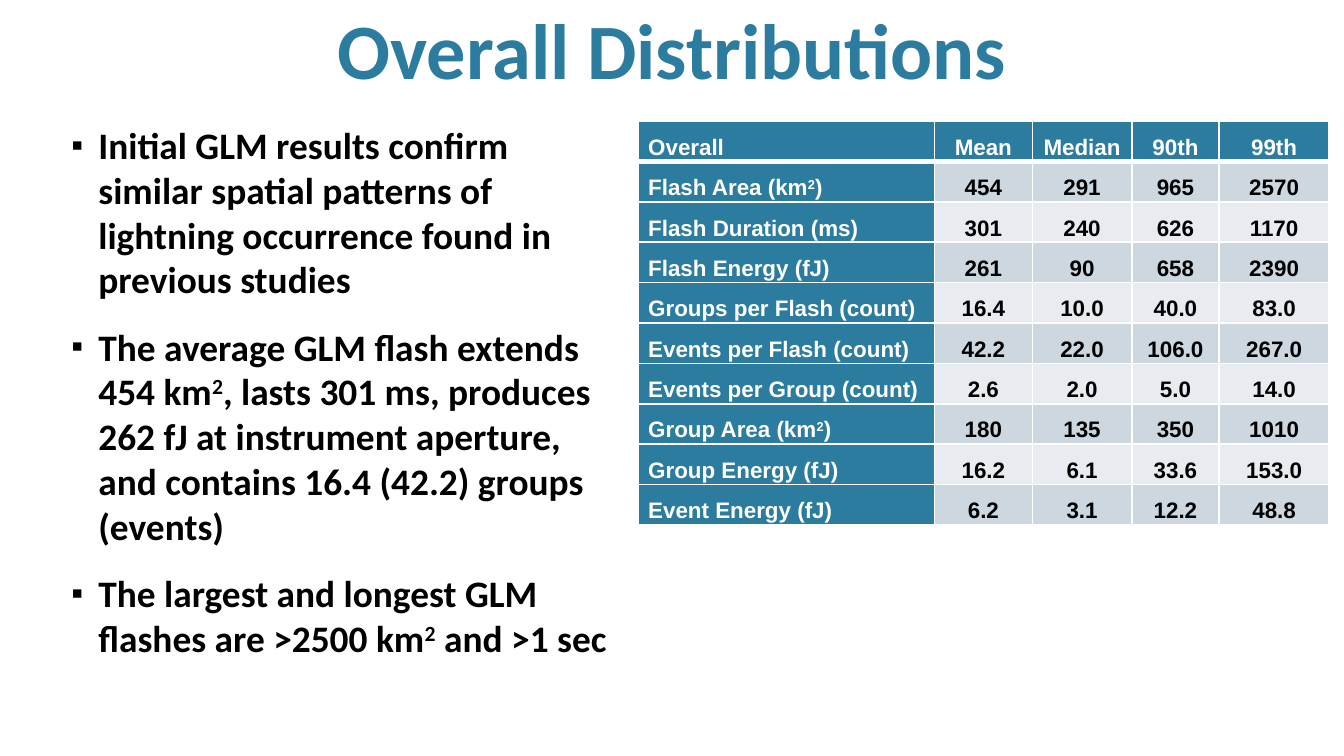
"""Build the slide on overall lightning distributions."""
from dataclasses import dataclass

from lxml import etree
from pptx import Presentation
from pptx import util as u
from pptx.dml.color import RGBColor
from pptx.enum import text
from pptx.oxml import ns

TEAL, WHITE, BLACK = "2C7C9F", "FFFFFF", "000000"
BANDS = ("CDD7DF", "E8ECF0")
COLUMN_WIDTHS = (5.59, 1.85, 1.88, 1.65, 2.08)
ROW_HEIGHT = 0.76
SUPERSCRIPT_MARK = "^"
LEFT, CENTER = text.PP_ALIGN.LEFT, text.PP_ALIGN.CENTER


@dataclass
class Style:
    size: float
    font: str
    color: str
    paragraph: dict
    bullet: str = ""


@dataclass
class TextBlock:
    box: tuple
    anchor: text.MSO_ANCHOR
    style: Style
    paragraphs: tuple


BLOCKS = (
    TextBlock(
        (0, 0.15, 25.4, 1.9),
        text.MSO_ANCHOR.BOTTOM,
        Style(42, "Calibri", TEAL, {"alignment": CENTER}),
        ("Overall Distributions",),
    ),
    TextBlock(
        (0.64, 2.06, 11.23, 11.86),
        text.MSO_ANCHOR.TOP,
        Style(20, "Calibri", BLACK, {"alignment": LEFT, "space_after": u.Pt(12)}, "▪"),
        (
            "Initial GLM results confirm similar spatial patterns of lightning "
            "occurrence found in previous studies",
            "The average GLM flash extends 454 km^2^, lasts 301 ms, produces 262 fJ "
            "at instrument aperture, and contains 16.4 (42.2) groups (events)",
            "The largest and longest GLM flashes are >2500 km^2^ and >1 sec",
        ),
    ),
)

STATISTICS = (
    ("Overall", "Mean", "Median", "90th", "99th"),
    ("Flash Area (km^2^)", "454", "291", "965", "2570"),
    ("Flash Duration (ms)", "301", "240", "626", "1170"),
    ("Flash Energy (fJ)", "261", "90", "658", "2390"),
    ("Groups per Flash (count)", "16.4", "10.0", "40.0", "83.0"),
    ("Events per Flash (count)", "42.2", "22.0", "106.0", "267.0"),
    ("Events per Group (count)", "2.6", "2.0", "5.0", "14.0"),
    ("Group Area (km^2^)", "180", "135", "350", "1010"),
    ("Group Energy (fJ)", "16.2", "6.1", "33.6", "153.0"),
    ("Event Energy (fJ)", "6.2", "3.1", "12.2", "48.8"),
)


def rgb(value: str) -> RGBColor:
    return RGBColor.from_string(value)


def assign(target, values: dict) -> None:
    for name, value in values.items():
        setattr(target, name, value)


def add_child(parent, tag: str, **attributes: str):
    return etree.SubElement(parent, ns.qn(f"a:{tag}"), attributes)


def add_bullet(paragraph, symbol: str) -> None:
    properties = paragraph._p.get_or_add_pPr()
    properties.set("marL", str(u.Cm(0.97)))
    properties.set("indent", str(u.Cm(-0.51)))
    add_child(add_child(properties, "buClr"), "srgbClr", val=BLACK)
    add_child(properties, "buSzPct", val="90000")
    add_child(properties, "buFont", typeface="Arial")
    add_child(properties, "buChar", char=symbol)


def write_paragraph(paragraph, content: str, style: Style) -> None:
    if style.bullet:
        add_bullet(paragraph, style.bullet)
    assign(paragraph, style.paragraph)
    for index, part in enumerate(content.split(SUPERSCRIPT_MARK)):
        run = paragraph.add_run()
        run.text = part
        assign(run.font, {"size": u.Pt(style.size), "name": style.font, "bold": True})
        run.font.color.rgb = rgb(style.color)
        if index % 2:
            run._r.get_or_add_rPr().set("baseline", "30000")


def add_text_block(slide, block: TextBlock) -> None:
    shape = slide.shapes.add_textbox(*map(u.Cm, block.box))
    frame = shape.text_frame
    sides = ("left", "top", "right", "bottom")
    margins = {f"margin_{side}": u.Cm(0.25) for side in sides}
    assign(frame, {"word_wrap": True, "vertical_anchor": block.anchor, **margins})
    for index, content in enumerate(block.paragraphs):
        paragraph = frame.add_paragraph() if index else frame.paragraphs[0]
        write_paragraph(paragraph, content, block.style)


def set_borders(cell, widths: dict) -> None:
    properties = cell._tc.get_or_add_tcPr()
    for side, width in widths.items():
        line = add_child(properties, f"ln{side}", w=str(u.Pt(width)))
        add_child(add_child(line, "solidFill"), "srgbClr", val=WHITE)


def fill_cell(cell, content: str, row: int, column: int) -> None:
    heading = row == 0 or column == 0
    set_borders(cell, {"L": 1, "R": 1, "T": 3 if row == 1 else 1, "B": 1 if row else 3})
    cell.fill.solid()
    cell.fill.fore_color.rgb = rgb(TEAL if heading else BANDS[(row - 1) % 2])
    assign(cell, {
        "vertical_anchor": text.MSO_ANCHOR.MIDDLE,
        "margin_left": u.Cm(0.18),
        "margin_right": u.Cm(0.18),
        "margin_top": 0,
        "margin_bottom": 0,
    })
    layout = {"alignment": CENTER if column else LEFT, "line_spacing": 1.5}
    style = Style(12, "Arial", WHITE if heading else BLACK, layout)
    write_paragraph(cell.text_frame.paragraphs[0], content, style)


def add_statistics_table(slide) -> None:
    size = (sum(COLUMN_WIDTHS), ROW_HEIGHT * len(STATISTICS))
    shape = slide.shapes.add_table(
        len(STATISTICS), len(COLUMN_WIDTHS), *map(u.Cm, (12.07, 2.29, *size))
    )
    table = shape.table
    for column, width in zip(table.columns, COLUMN_WIDTHS):
        column.width = u.Cm(width)
    for row, values in enumerate(STATISTICS):
        table.rows[row].height = u.Cm(ROW_HEIGHT)
        for column, content in enumerate(values):
            fill_cell(table.cell(row, column), content, row, column)


def main() -> None:
    presentation = Presentation()
    assign(presentation, {"slide_width": u.Cm(25.4), "slide_height": u.Cm(14.29)})
    slide = presentation.slides.add_slide(presentation.slide_layouts[6])
    for block in BLOCKS:
        add_text_block(slide, block)
    add_statistics_table(slide)
    presentation.save("out.pptx")


if __name__ == "__main__":
    main()
